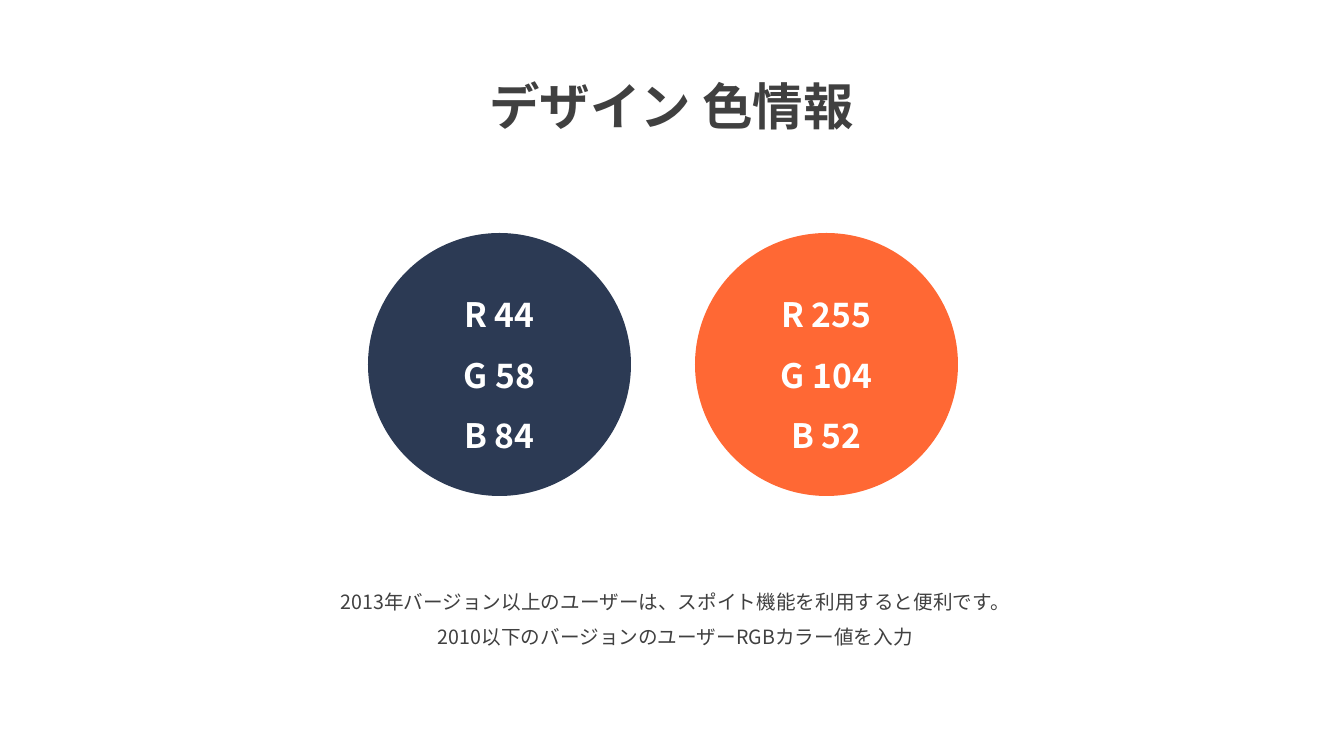
"""Build a slide that lists the RGB values of the two design colours."""
from dataclasses import dataclass

from lxml.etree import SubElement
from pptx import Presentation
from pptx.dml.color import RGBColor
from pptx.enum.shapes import MSO_SHAPE as Shape
from pptx.enum.text import MSO_ANCHOR as Anchor, MSO_AUTO_SIZE as AutoSize, PP_ALIGN as Align
from pptx.oxml.ns import qn
from pptx.util import Pt

TITLE = "デザイン 色情報"
SWATCHES = [(44, 58, 84), (255, 104, 52)]
NOTES = [
    "2013年バージョン以上のユーザーは、スポイト機能を利用すると便利です。",
    "2010以下のバージョンのユーザーRGBカラー値を入力",
]

PX = 914400 / 100.8
PAGE_SIZE = (1344, 756)
TITLE_BOX = (427, 40, 489, 92)
NOTE_BOX = (254, 573, 843, 78)
CIRCLE_LEFT, CIRCLE_TOP, CIRCLE_SIZE, CIRCLE_GAP = 368, 233, 263, 64


@dataclass(frozen=True)
class Theme:
    font: str = "Noto Sans CJK KR"
    ink: RGBColor = RGBColor(64, 64, 64)
    light: RGBColor = RGBColor(255, 255, 255)
    title_size: int = 36
    value_size: int = 24
    note_size: int = 14
    line_spacing: float = 1.5


THEME = Theme()


def emu(*lengths):
    return [round(length * PX) for length in lengths]


def write(shape, lines, size, color=THEME.ink, bold=False, anchor=Anchor.TOP):
    frame = shape.text_frame
    frame.word_wrap = True
    frame.auto_size = AutoSize.NONE
    frame.vertical_anchor = anchor
    for index, line in enumerate(lines):
        para = frame.add_paragraph() if index else frame.paragraphs[0]
        para.alignment = Align.CENTER
        para.line_spacing = THEME.line_spacing
        span = para.add_run()
        span.text = line
        span.font.size = Pt(size)
        span.font.bold = bold
        span.font.color.rgb = color
        span.font.name = THEME.font
        SubElement(span.font._element, qn("a:ea"), typeface=THEME.font)


def add_swatch(page, index, channels):
    left = CIRCLE_LEFT + index * (CIRCLE_SIZE + CIRCLE_GAP)
    circle = page.shapes.add_shape(
        Shape.OVAL, *emu(left, CIRCLE_TOP, CIRCLE_SIZE, CIRCLE_SIZE))
    circle.shadow.inherit = False
    circle.fill.solid()
    circle.fill.fore_color.rgb = RGBColor(*channels)
    circle.line.fill.background()
    values = [f"{name} {value}" for name, value in zip("RGB", channels)]
    write(circle, values, THEME.value_size, color=THEME.light, bold=True, anchor=Anchor.MIDDLE)


def main():
    deck = Presentation()
    deck.slide_width, deck.slide_height = emu(*PAGE_SIZE)
    page = deck.slides.add_slide(deck.slide_layouts.get_by_name("Title Only"))
    title = page.shapes.title
    title.left, title.top, title.width, title.height = emu(*TITLE_BOX)
    write(title, [TITLE], THEME.title_size, bold=True)
    for index, channels in enumerate(SWATCHES):
        add_swatch(page, index, channels)
    write(page.shapes.add_textbox(*emu(*NOTE_BOX)), NOTES, THEME.note_size)
    deck.save("out.pptx")


if __name__ == "__main__":
    main()
